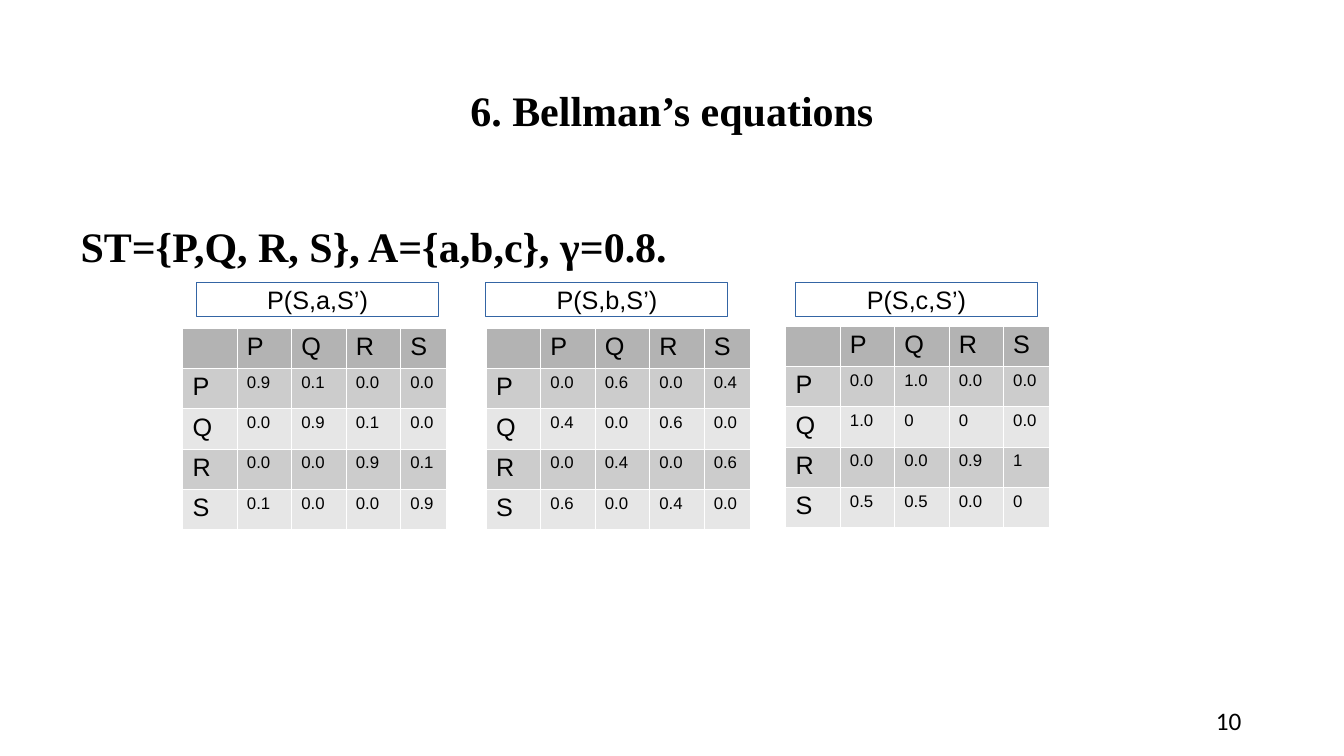
import pptx
import pptx.util
import pptx.dml.color
import pptx.enum.shapes
import pptx.enum.text
import lxml.etree
from pptx.util import Inches

# Content
TITLE = "6. Bellman’s equations"
SETUP = "ST={P,Q, R, S}, A={a,b,c}, γ=0.8."
PAGE_NUMBER = "10"
STATES = ["P", "Q", "R", "S"]
# action, label left, table left, table top, probabilities
TRANSITIONS = [
    ("a", 1.95, 1.81, 3.25, ["0.9 0.1 0.0 0.0", "0.0 0.9 0.1 0.0",
                             "0.0 0.0 0.9 0.1", "0.1 0.0 0.0 0.9"]),
    ("b", 4.82, 4.82, 3.25, ["0.0 0.6 0.0 0.4", "0.4 0.0 0.6 0.0",
                             "0.0 0.4 0.0 0.6", "0.6 0.0 0.4 0.0"]),
    ("c", 7.89, 7.79, 3.23, ["0.0 1.0 0.0 0.0", "1.0 0 0 0.0",
                             "0.0 0.0 0.9 1", "0.5 0.5 0.0 0"]),
]
COLUMN_WIDTHS = [0.54, 0.54, 0.54, 0.54, 0.46]
ROW_HEIGHT = 0.38
HEADER_FILL = "B3B3B3"
BAND_FILLS = ["CCCCCC", "E6E6E6"]

ALIGN = pptx.enum.text.PP_ALIGN
ANCHOR = pptx.enum.text.MSO_ANCHOR
DRAWING = "http://schemas.openxmlformats.org/drawingml/2006/main"


def color(hex_code):
    return pptx.dml.color.RGBColor.from_string(hex_code)


def write(frame, text, size, font, align=ALIGN.LEFT, bold=False):
    para = frame.paragraphs[0]
    para.text = text
    para.alignment = align
    para.font.size = pptx.util.Pt(size)
    para.font.name = font
    para.font.bold = bold
    para.font.color.rgb = color("000000")
    return para


def add_text(page, place, text, size, font, align, anchor, bold=False):
    box = page.shapes.add_textbox(*map(Inches, place))
    box.text_frame.word_wrap = True
    box.text_frame.vertical_anchor = anchor
    return write(box.text_frame, text, size, font, align, bold)


def add_label(page, left, text):
    box = page.shapes.add_shape(pptx.enum.shapes.MSO_SHAPE.RECTANGLE,
                                Inches(left), Inches(2.8), Inches(2.4), Inches(0.34))
    box.shadow.inherit = False
    box.fill.solid()
    box.fill.fore_color.rgb = color("FFFFFF")
    box.line.color.rgb = color("3465A4")
    box.line.width = pptx.util.Pt(0.75)
    box.text_frame.word_wrap = False
    box.text_frame.vertical_anchor = ANCHOR.MIDDLE
    write(box.text_frame, text, 18, "Arial", ALIGN.CENTER)


def style_cell(cell, fill):
    properties = cell._tc.get_or_add_tcPr()
    for side in ("lnL", "lnR", "lnT", "lnB"):
        line = lxml.etree.SubElement(properties, f"{{{DRAWING}}}{side}",
                                     w=str(pptx.util.Pt(0.06)))
        paint = lxml.etree.SubElement(line, f"{{{DRAWING}}}solidFill")
        lxml.etree.SubElement(paint, f"{{{DRAWING}}}srgbClr", val="FFFFFF")
    cell.fill.solid()
    cell.fill.fore_color.rgb = color(fill)


def add_matrix(page, left, top, probabilities):
    rows = [[""] + STATES]
    rows += [[state] + line.split() for state, line in zip(STATES, probabilities)]
    table = page.shapes.add_table(
        len(rows), len(COLUMN_WIDTHS), Inches(left), Inches(top),
        Inches(sum(COLUMN_WIDTHS)), Inches(ROW_HEIGHT * len(rows))).table
    for column, width in zip(table.columns, COLUMN_WIDTHS):
        column.width = Inches(width)
    for r, row in enumerate(rows):
        fill = BAND_FILLS[(r - 1) % 2] if r else HEADER_FILL
        for c, text in enumerate(row):
            cell = table.cell(r, c)
            style_cell(cell, fill)
            write(cell.text_frame, text, 12 if r and c else 18, "Arial")


def main():
    deck = pptx.Presentation()
    deck.slide_width, deck.slide_height = Inches(13.33), Inches(7.5)
    page = deck.slides.add_slide(deck.slide_layouts[6])

    # Title, setup line and page number
    setup = add_text(page, (0.7, 2.2, 11.49, 4.75), SETUP, 30, "Times New Roman",
                     ALIGN.JUSTIFY, ANCHOR.TOP, True)
    title = add_text(page, (0.92, 0.4, 11.49, 1.44), TITLE, 30, "Times New Roman",
                     ALIGN.CENTER, ANCHOR.MIDDLE, True)
    setup.line_spacing = title.line_spacing = 0.9
    add_text(page, (9.42, 6.95, 2.99, 0.39), PAGE_NUMBER, 18, "Calibri",
             ALIGN.RIGHT, ANCHOR.MIDDLE)

    # One labelled transition matrix per action
    for action, label_left, left, top, probabilities in TRANSITIONS:
        add_label(page, label_left, f"P(S,{action},S’)")
        add_matrix(page, left, top, probabilities)

    deck.save("out.pptx")


if __name__ == "__main__":
    main()
